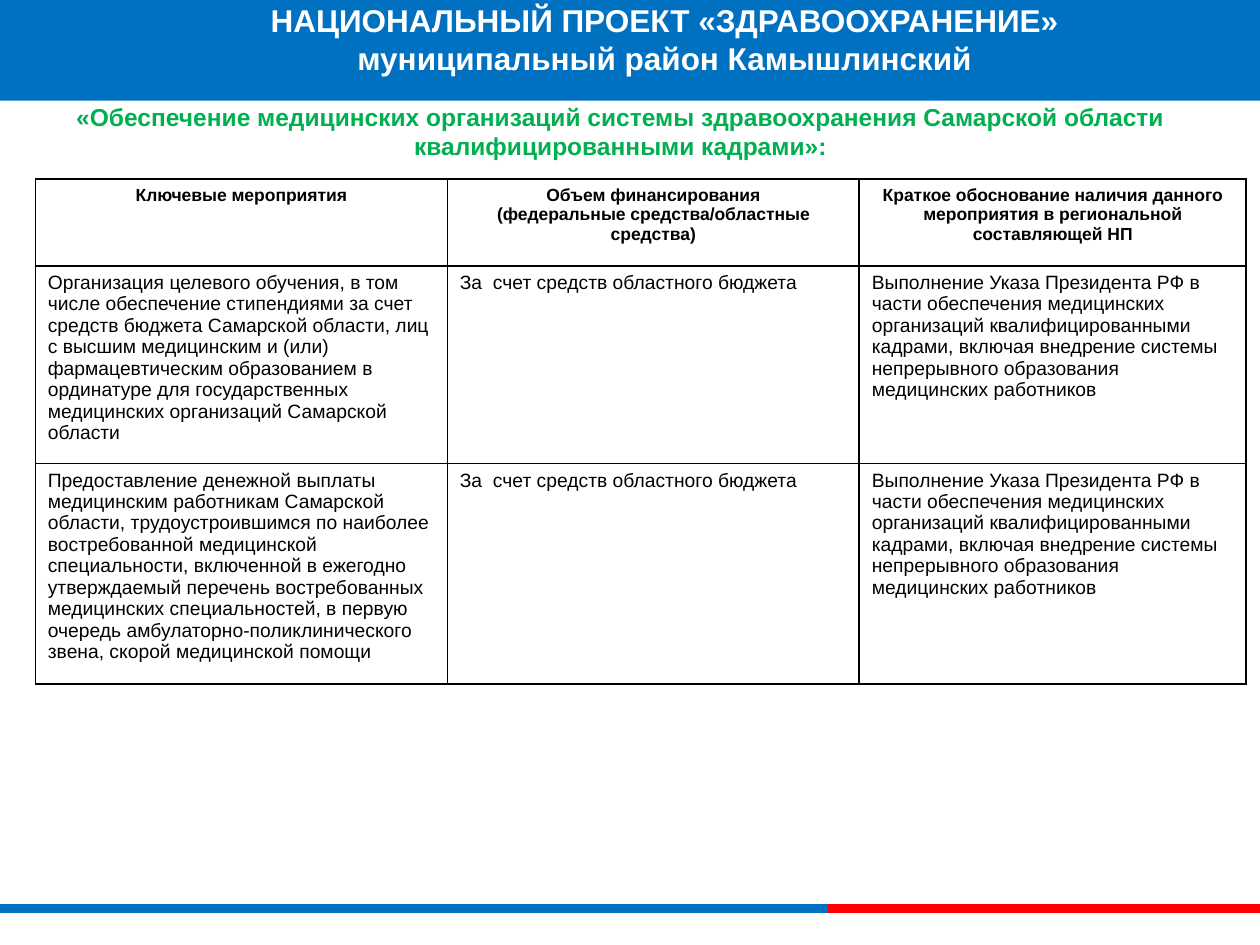
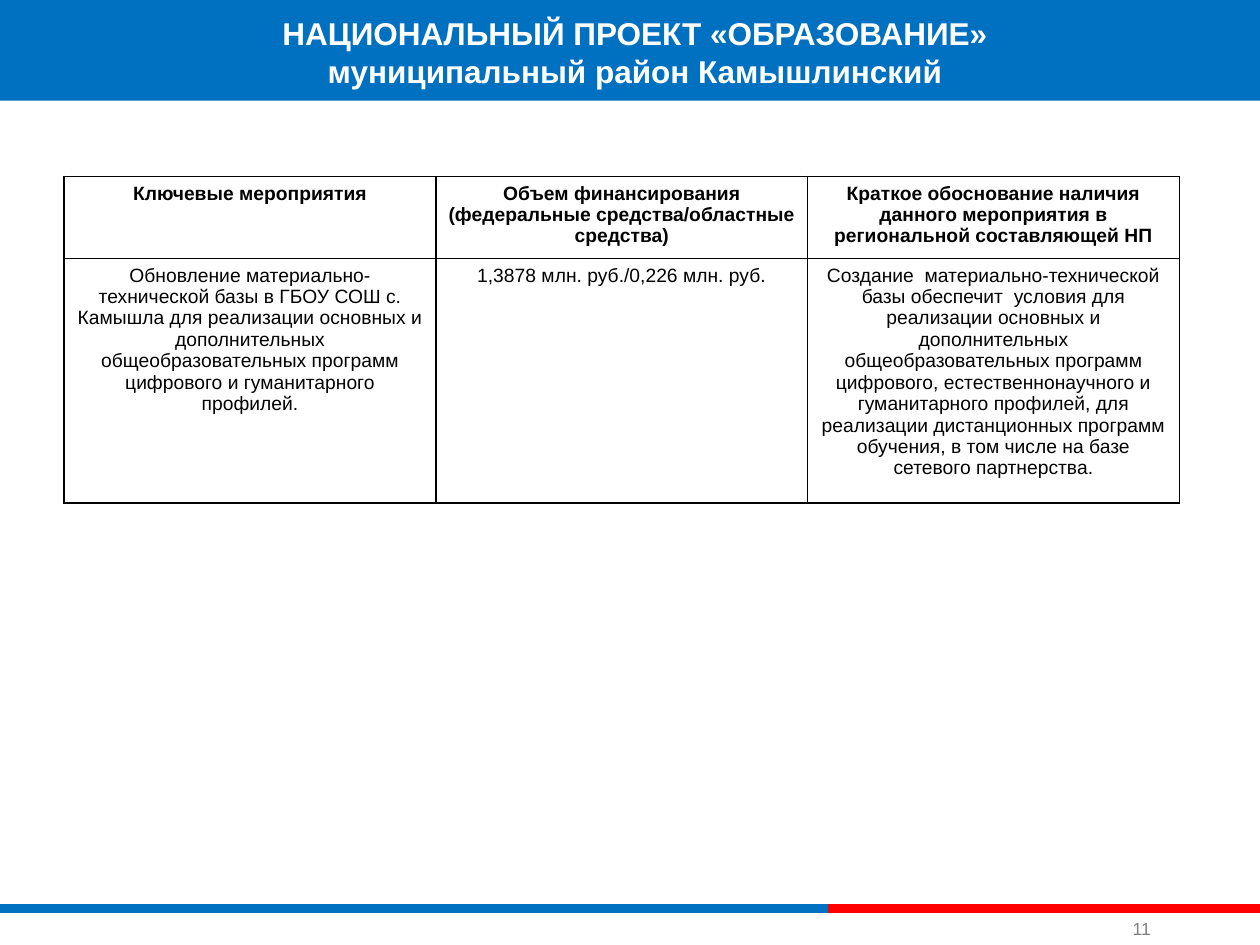
import pptx
import pptx.dml.color
import pptx.enum.shapes
import pptx.enum.text
import pptx.oxml
import pptx.oxml.ns
import pptx.util

Inches = pptx.util.Inches
Pt = pptx.util.Pt
ALIGN = pptx.enum.text.PP_ALIGN
ANCHOR = pptx.enum.text.MSO_ANCHOR

BLUE, RED, GREEN = "0070C1", "FF0000", "00B050"
WHITE, BLACK, GRAY = "FFFFFF", "000000", "808080"
FONT = "Arial"
TITLE = {"size": Pt(18), "bold": True}
SUBTITLE = {"size": Pt(14), "bold": True}
PAGE_NUMBER = {"size": Pt(10), "bold": False}
CELL = {"size": Pt(11), "bold": False}

DISTRICT = "муниципальный район Камышлинский"
ACTIVITIES = "Ключевые мероприятия"
FUNDING = "Объем финансирования"
SOURCES = "(федеральные средства/областные средства)"
REASON = "Краткое обоснование наличия данного мероприятия в региональной составляющей НП"
REGIONAL_BUDGET = "За  счет средств областного бюджета"
DECREE = (
    "Выполнение Указа Президента РФ в части обеспечения медицинских организаций "
    "квалифицированными кадрами, включая внедрение системы непрерывного образования "
    "медицинских работников"
)
HEALTH_ROWS = [
    [ACTIVITIES, FUNDING + "\n" + SOURCES, REASON],
    [
        "Организация целевого обучения, в том числе обеспечение стипендиями за счет "
        "средств бюджета Самарской области, лиц с высшим медицинским и (или) "
        "фармацевтическим образованием в ординатуре для государственных медицинских "
        "организаций Самарской области",
        REGIONAL_BUDGET,
        DECREE,
    ],
    [
        "Предоставление денежной выплаты медицинским работникам Самарской области, "
        "трудоустроившимся по наиболее востребованной медицинской специальности, "
        "включенной в ежегодно утверждаемый перечень востребованных медицинских "
        "специальностей, в первую очередь амбулаторно-поликлинического звена, скорой "
        "медицинской помощи",
        REGIONAL_BUDGET,
        DECREE,
    ],
]
EDUCATION_ROWS = [
    [ACTIVITIES, FUNDING + " " + SOURCES, REASON],
    [
        "Обновление материально-технической базы в ГБОУ СОШ с. Камышла для реализации "
        "основных и дополнительных общеобразовательных программ цифрового и "
        "гуманитарного профилей.",
        "1,3878 млн. руб./0,226 млн. руб.",
        "Создание  материально-технической базы обеспечит  условия для реализации "
        "основных и дополнительных общеобразовательных программ цифрового, "
        "естественнонаучного и гуманитарного профилей, для реализации дистанционных "
        "программ обучения, в том числе на базе сетевого партнерства.",
    ],
]


def color(value):
    return pptx.dml.color.RGBColor.from_string(value)


def write(frame, text, style, ink, align):
    for index, line in enumerate(text.split("\n")):
        para = frame.paragraphs[0] if index == 0 else frame.add_paragraph()
        para.alignment = align
        span = para.add_run()
        span.text = line
        span.font.name = FONT
        span.font.color.rgb = color(ink)
        for name, value in style.items():
            setattr(span.font, name, value)
        end_mark = para._p.get_or_add_endParaRPr()
        end_mark.set("sz", str(style["size"].centipoints))


def add_text(page, place, text, style, ink, align=ALIGN.CENTER, anchor=ANCHOR.TOP):
    box = page.shapes.add_textbox(*map(Inches, place))
    frame = box.text_frame
    margins = dict.fromkeys(
        ["margin_left", "margin_top", "margin_right", "margin_bottom"], Inches(0.05)
    )
    for name, value in {**margins, "word_wrap": True, "vertical_anchor": anchor}.items():
        setattr(frame, name, value)
    write(frame, text, style, ink, align)


def add_stripe(page, left, right, ink):
    level = Inches(7.21)
    stripe = page.shapes.add_connector(
        pptx.enum.shapes.MSO_CONNECTOR.STRAIGHT, Inches(left), level, Inches(right), level
    )
    stripe.line.color.rgb = color(ink)
    stripe.line.width = Pt(5)
    effects = pptx.oxml.parse_xml(f"<a:effectLst {pptx.oxml.ns.nsdecls('a')}/>")
    stripe._element.spPr.append(effects)


def add_page(deck):
    page = deck.slides.add_slide(deck.slide_layouts[6])
    add_stripe(page, 0, 6.57, BLUE)
    add_stripe(page, 6.57, 10, RED)
    band = page.shapes.add_shape(
        pptx.enum.shapes.MSO_SHAPE.RECTANGLE, 0, 0, Inches(10), Inches(0.8)
    )
    band.shadow.inherit = False
    band.fill.solid()
    band.fill.fore_color.rgb = color(BLUE)
    band.line.fill.background()
    return page


def add_borders(cell):
    properties = cell._tc.get_or_add_tcPr()
    for position, side in enumerate(["lnL", "lnR", "lnT", "lnB"]):
        border = pptx.oxml.parse_xml(
            f'<a:{side} {pptx.oxml.ns.nsdecls("a")} w="{Pt(1)}">'
            f'<a:solidFill><a:srgbClr val="{BLACK}"/></a:solidFill></a:{side}>'
        )
        properties.insert(position, border)


def add_grid(page, left, top, widths, heights, rows, header_size, body_align):
    size = [Inches(value) for value in (left, top, sum(widths), sum(heights))]
    table = page.shapes.add_table(len(rows), len(widths), *size).table
    table.first_row = False
    table.horz_banding = False
    for column, width in zip(table.columns, widths):
        column.width = Inches(width)
    for row_index, (texts, height) in enumerate(zip(rows, heights)):
        table.rows[row_index].height = Inches(height)
        header = row_index == 0
        style = {"size": Pt(header_size), "bold": True} if header else CELL
        align = ALIGN.CENTER if header else body_align
        for column_index, text in enumerate(texts):
            cell = table.cell(row_index, column_index)
            cell.fill.background()
            add_borders(cell)
            write(cell.text_frame, text, style, BLACK, align)


def add_health_page(deck):
    page = add_page(deck)
    add_text(
        page, (0.12, 0.76, 9.61, 0.6),
        "«Обеспечение медицинских организаций системы здравоохранения Самарской области "
        "квалифицированными кадрами»:",
        SUBTITLE, GREEN,
    )
    add_text(
        page, (1.3, -0.04, 7.95, 0.71),
        "НАЦИОНАЛЬНЫЙ ПРОЕКТ «ЗДРАВООХРАНЕНИЕ»\n" + DISTRICT, TITLE, WHITE,
    )
    add_grid(
        page, 0.28, 1.42, [3.27, 3.27, 3.07], [0.69, 1.46, 1.63],
        HEALTH_ROWS, 10, ALIGN.LEFT,
    )


def add_education_page(deck):
    page = add_page(deck)
    add_text(
        page, (8.94, 7.25, 0.4, 0.25), "11", PAGE_NUMBER, GRAY,
        align=ALIGN.LEFT, anchor=ANCHOR.BOTTOM,
    )
    add_text(
        page, (2.04, 0.06, 6, 0.71),
        "НАЦИОНАЛЬНЫЙ ПРОЕКТ «ОБРАЗОВАНИЕ»\n" + DISTRICT, TITLE, WHITE,
    )
    add_grid(
        page, 0.51, 1.4, [2.95] * 3, [0.65, 1.94], EDUCATION_ROWS, 11, ALIGN.CENTER
    )


def main():
    deck = pptx.Presentation()
    deck.slide_width = Inches(10)
    deck.slide_height = Inches(7.5)
    add_health_page(deck)
    add_education_page(deck)
    deck.save("out.pptx")


if __name__ == "__main__":
    main()
